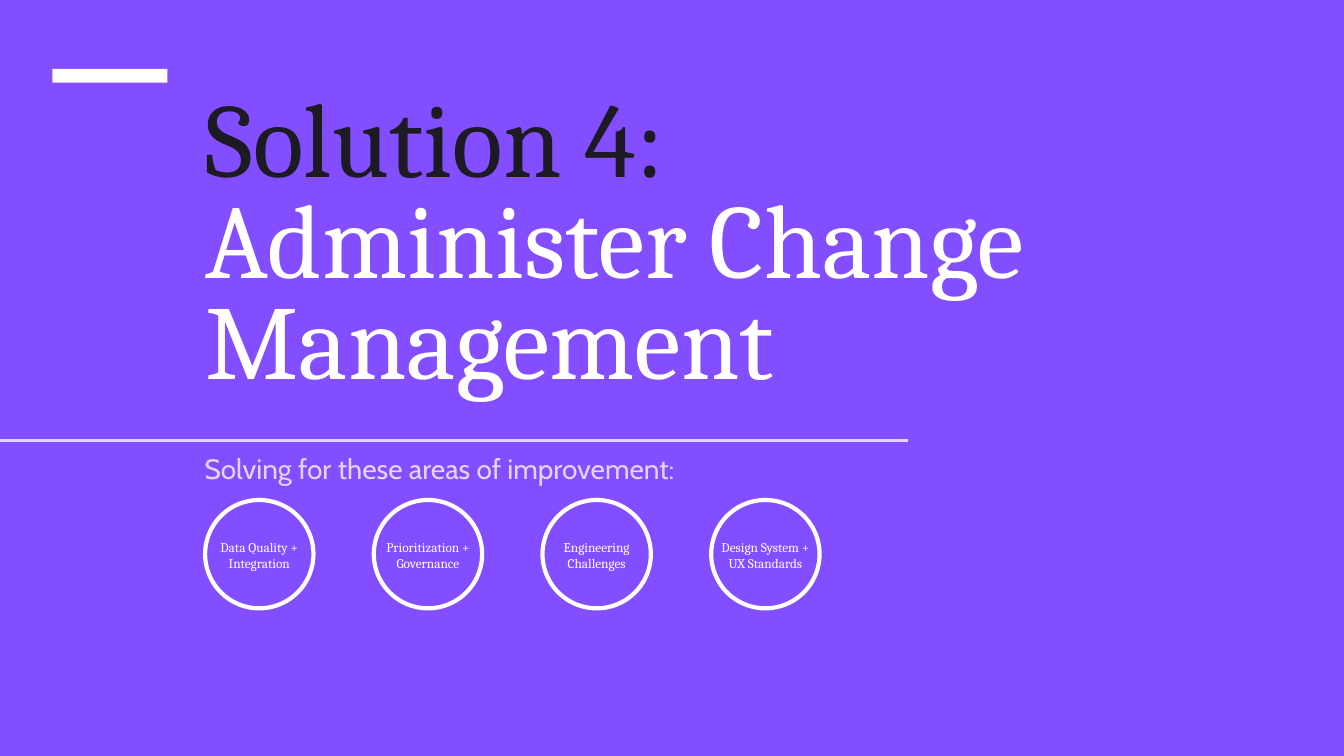
from pptx import Presentation
from pptx.dml.color import RGBColor
from pptx.enum.shapes import MSO_CONNECTOR, MSO_SHAPE
from pptx.enum.text import MSO_ANCHOR, MSO_AUTO_SIZE, PP_ALIGN
from pptx.oxml.ns import qn
from pptx.util import Pt
from lxml.etree import SubElement

# Content
TITLE = ["Solution 4:", "Administer Change Management"]
SUBTITLE = "Solving for these areas of improvement:"
AREAS = [
    "Data Quality + Integration",
    "Prioritization + Governance",
    "Engineering Challenges",
    "Design System + UX Standards",
]

# Style
PURPLE = RGBColor(0x83, 0x4E, 0xFF)
INK = RGBColor(0x1C, 0x1A, 0x23)
WHITE = RGBColor(0xFF, 0xFF, 0xFF)
LILAC = RGBColor(0xE2, 0xD5, 0xF5)
SERIF, SANS = "Cambria", "Cabin"

# Circle row, in points
CIRCLE_LEFT, CIRCLE_TOP, CIRCLE_SIZE, CIRCLE_PITCH = 293, 714.25, 154.8, 241
LABEL_TOP, LABEL_WIDTH, LABEL_HEIGHT = 763.2, 150, 66.2


def format_para(para, font, size, color, align=PP_ALIGN.LEFT, spacing=1.0):
    para.alignment = align
    para.line_spacing = spacing
    for span in para.runs:
        span.font.name = font
        span.font.size = Pt(size)
        span.font.color.rgb = color


def set_margins(frame, margin):
    frame.margin_left = frame.margin_right = Pt(margin)
    frame.margin_top = frame.margin_bottom = Pt(margin)
    frame.word_wrap = True


def add_text(page, text, left, top, width, height, **style):
    box = page.shapes.add_textbox(Pt(left), Pt(top), Pt(width), Pt(height))
    frame = box.text_frame
    set_margins(frame, 7.2)
    frame.text = text
    format_para(frame.paragraphs[0], **style)


def add_plain_shape(page, kind, left, top, width, height, fill):
    shape = page.shapes.add_shape(kind, Pt(left), Pt(top), Pt(width), Pt(height))
    shape.shadow.inherit = False
    shape.fill.solid()
    shape.fill.fore_color.rgb = fill
    shape.line.fill.background()
    return shape


def main():
    deck = Presentation()
    deck.slide_width, deck.slide_height = Pt(1920), Pt(1080)
    page = deck.slides.add_slide(deck.slide_layouts[5])
    page.background.fill.solid()
    page.background.fill.fore_color.rgb = PURPLE

    # Plain bar in the brand position
    add_plain_shape(page, MSO_SHAPE.RECTANGLE, 75, 98.6, 164, 19.4, WHITE)

    # Title
    title = page.shapes.title
    title.left, title.top, title.width, title.height = Pt(293.8), Pt(158.4), Pt(1337.8), Pt(392.4)
    frame = title.text_frame
    set_margins(frame, 0)
    frame.auto_size = MSO_AUTO_SIZE.NONE
    frame.vertical_anchor = MSO_ANCHOR.MIDDLE
    frame.text = "\n".join(TITLE)
    for para, color in zip(frame.paragraphs, (INK, WHITE)):
        format_para(para, SERIF, 150, color, spacing=0.8)

    # Subtitle
    add_text(page, SUBTITLE, 285.1, 635.8, 1080.7, 63.4,
             font=SANS, size=40, color=LILAC, spacing=1.03)

    # Circles with centred labels
    for index, area in enumerate(AREAS):
        left = CIRCLE_LEFT + index * CIRCLE_PITCH
        circle = add_plain_shape(page, MSO_SHAPE.OVAL, left, CIRCLE_TOP,
                                 CIRCLE_SIZE, CIRCLE_SIZE, PURPLE)
        circle.line.color.rgb = WHITE
        circle.line.width = Pt(6)
        label_left = left + (CIRCLE_SIZE - LABEL_WIDTH) / 2
        add_text(page, area, label_left, LABEL_TOP, LABEL_WIDTH, LABEL_HEIGHT,
                 font=SERIF, size=19, color=WHITE, align=PP_ALIGN.CENTER)

    # Divider
    divider = page.shapes.add_connector(MSO_CONNECTOR.STRAIGHT, Pt(0), Pt(629.3), Pt(1297.4), Pt(629.3))
    divider.line.color.rgb = LILAC
    divider.line.width = Pt(3)
    SubElement(divider.element.spPr, qn("a:effectLst"))

    deck.save("out.pptx")


if __name__ == "__main__":
    main()
